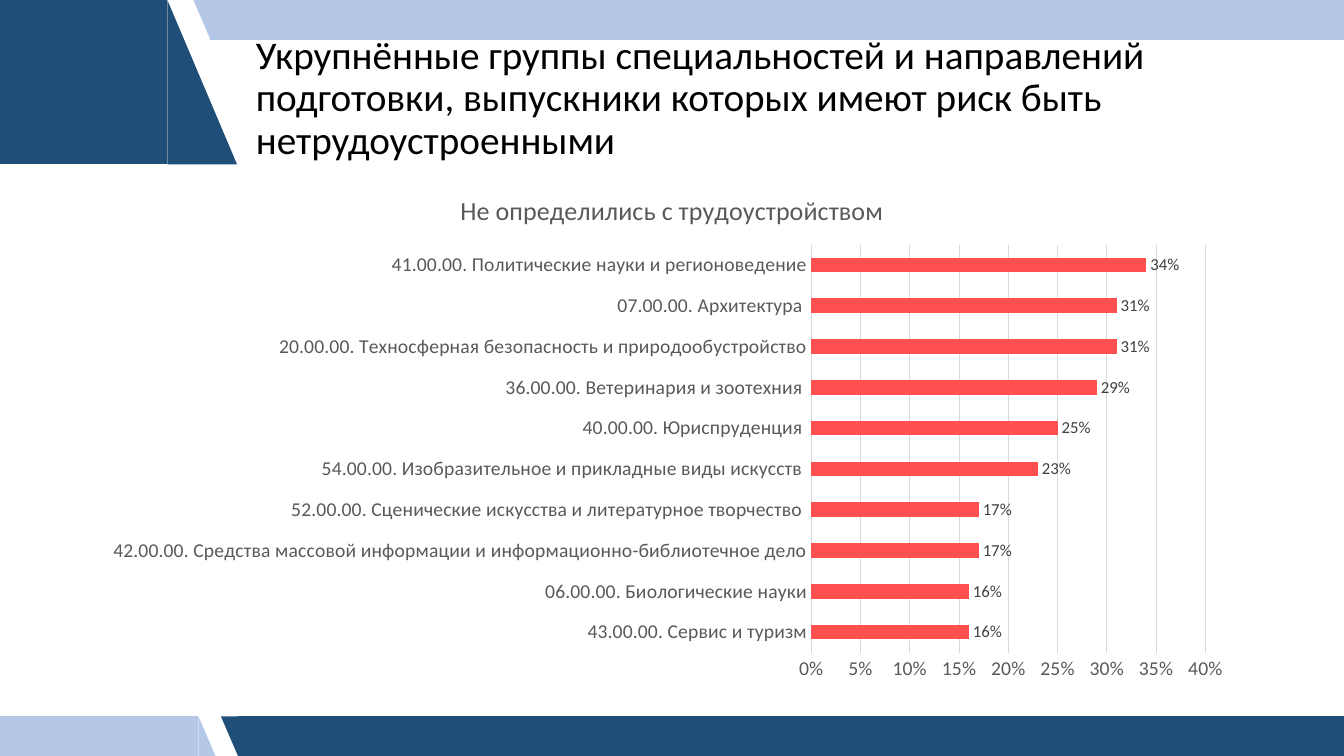
import pptx
import pptx.chart.data
import pptx.dml.color
import pptx.enum.chart
import pptx.enum.shapes
import pptx.enum.text
import pptx.oxml
import pptx.oxml.ns
import pptx.util

Pt = pptx.util.Pt
RGBColor = pptx.dml.color.RGBColor
MSO_SHAPE = pptx.enum.shapes.MSO_SHAPE

NAVY = RGBColor(0x1F, 0x4E, 0x79)
PALE_BLUE = RGBColor(0xB4, 0xC7, 0xE7)
BLACK = RGBColor(0, 0, 0)
GREY = RGBColor(0x59, 0x59, 0x59)
DARK_GREY = RGBColor(0x40, 0x40, 0x40)
LIGHT_GREY = RGBColor(0xD9, 0xD9, 0xD9)
RED = RGBColor(0xFF, 0x4F, 0x4F)
FONT = "Calibri"

TITLE = (
    "Укрупнённые группы специальностей и направлений подготовки, "
    "выпускники которых имеют риск быть нетрудоустроенными"
)
CHART_TITLE = "Не определились с трудоустройством"
SHARES = [
    ("43.00.00. Сервис и туризм", 0.16),
    ("06.00.00. Биологические науки", 0.16),
    ("42.00.00. Средства массовой информации и информационно-библиотечное дело", 0.17),
    ("52.00.00. Сценические искусства и литературное творчество ", 0.17),
    ("54.00.00. Изобразительное и прикладные виды искусств ", 0.23),
    ("40.00.00. Юриспруденция ", 0.25),
    ("36.00.00. Ветеринария и зоотехния ", 0.29),
    ("20.00.00. Техносферная безопасность и природообустройство", 0.31),
    ("07.00.00. Архитектура ", 0.31),
    ("41.00.00. Политические науки и регионоведение", 0.34),
]

SLIDE_W, SLIDE_H = 960, 540
STRIP_H = 28.3
CORNER_H = 117.4
SLANT = 12.2
BOTTOM = SLIDE_H - STRIP_H

# (left, top, width, height, slant width, colour, slant on the left)
BANDS = [
    (170, BOTTOM, SLIDE_W - 170, STRIP_H, SLANT, NAVY, True),
    (0, BOTTOM, 141.8, STRIP_H, SLANT, PALE_BLUE, False),
    (150.3, 0, SLIDE_W - 150.3, STRIP_H, SLANT, PALE_BLUE, True),
    (0, 0, 119.5, CORNER_H, 49.8, NAVY, False),
]
PLOT_LAYOUT = {"x": 0.62, "y": 0.14, "w": 0.34, "h": 0.78}


def add_block(s, shape_type, left, top, width, height, color, rotation):
    sp = s.shapes.add_shape(shape_type, Pt(left), Pt(top), Pt(width), Pt(height))
    sp.rotation = rotation
    sp.shadow.inherit = False
    sp.fill.solid()
    sp.fill.fore_color.rgb = color
    sp.line.fill.background()


def add_band(s, left, top, width, height, slant, color, slant_left):
    rotation = 180 if slant_left else 0
    slant_x = left - slant if slant_left else left + width
    add_block(s, MSO_SHAPE.FLOWCHART_PROCESS, left, top, width, height, color, rotation)
    add_block(s, MSO_SHAPE.RIGHT_TRIANGLE, slant_x, top, slant, height, color, rotation)


def set_font(font, size, color):
    font.name = FONT
    font.size = Pt(size)
    font.bold = False
    font.color.rgb = color


def add_title(s):
    sp = s.shapes.add_textbox(Pt(175.7), Pt(36), Pt(720.7), Pt(69.8))
    tf = sp.text_frame
    tf.word_wrap = True
    tf.vertical_anchor = pptx.enum.text.MSO_ANCHOR.MIDDLE
    p = tf.paragraphs[0]
    p.text = TITLE
    p.line_spacing = 0.9
    set_font(p.font, 28, BLACK)


def set_plot_layout(chart):
    area = chart.plots[0]._element.getparent()
    for old in area.findall(pptx.oxml.ns.qn("c:layout")):
        area.remove(old)
    sizes = "".join(f'<c:{k} val="{v}"/>' for k, v in PLOT_LAYOUT.items())
    area.insert(0, pptx.oxml.parse_xml(
        f'<c:layout {pptx.oxml.ns.nsdecls("c")}><c:manualLayout>'
        '<c:layoutTarget val="inner"/><c:xMode val="edge"/><c:yMode val="edge"/>'
        f'{sizes}</c:manualLayout></c:layout>'))


def add_share_chart(s):
    data = pptx.chart.data.CategoryChartData(number_format="0%")
    data.categories = [name for name, share in SHARES]
    data.add_series(CHART_TITLE, [share for name, share in SHARES])
    chart = s.shapes.add_chart(
        pptx.enum.chart.XL_CHART_TYPE.BAR_CLUSTERED,
        Pt(66.2), Pt(122.4), Pt(828), Pt(373.7), data).chart
    set_font(chart.font, 10, BLACK)
    chart.has_legend = False
    chart.has_title = True
    p = chart.chart_title.text_frame.paragraphs[0]
    p.text = CHART_TITLE
    set_font(p.font, 18.6, GREY)

    plot = chart.plots[0]
    plot.vary_by_categories = False
    plot.gap_width = 182
    series = plot.series[0]
    series.format.fill.solid()
    series.format.fill.fore_color.rgb = RED
    plot.has_data_labels = True
    labels = plot.data_labels
    labels.show_value = True
    labels.number_format = "0%"
    labels.number_format_is_linked = False
    labels.position = pptx.enum.chart.XL_LABEL_POSITION.OUTSIDE_END
    set_font(labels.font, 12, DARK_GREY)

    cat_axis, val_axis = chart.category_axis, chart.value_axis
    for axis in (cat_axis, val_axis):
        axis.major_tick_mark = pptx.enum.chart.XL_TICK_MARK.NONE
        axis.minor_tick_mark = pptx.enum.chart.XL_TICK_MARK.NONE
        set_font(axis.tick_labels.font, 14, GREY)
    val_axis.minimum_scale = 0
    val_axis.maximum_scale = 0.4
    val_axis.major_unit = 0.05
    val_axis.tick_labels.number_format = "0%"
    val_axis.tick_labels.number_format_is_linked = False
    val_axis.format.line.fill.background()
    val_axis.has_major_gridlines = True
    for line in (cat_axis.format.line, val_axis.major_gridlines.format.line):
        line.color.rgb = LIGHT_GREY
        line.width = Pt(0.75)
    set_plot_layout(chart)


def main():
    prs = pptx.Presentation()
    prs.slide_width, prs.slide_height = Pt(SLIDE_W), Pt(SLIDE_H)
    s = prs.slides.add_slide(prs.slide_layouts[6])
    for band in BANDS:
        add_band(s, *band)
    add_title(s)
    add_share_chart(s)
    prs.save("out.pptx")


if __name__ == "__main__":
    main()
